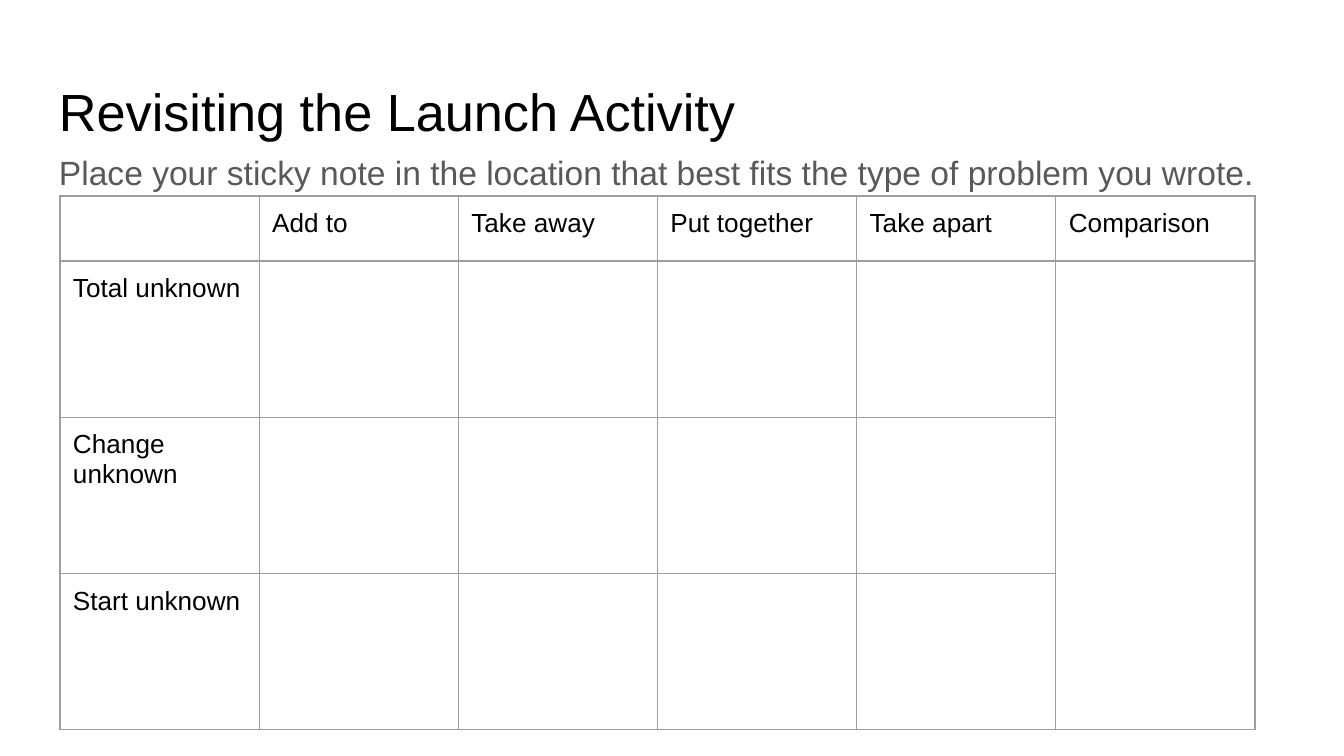
from lxml.etree import SubElement
from pptx import Presentation
from pptx.dml.color import RGBColor
from pptx.enum.text import MSO_ANCHOR as Anchor
from pptx.oxml.ns import qn
from pptx.util import Pt

BLACK = RGBColor(0x00, 0x00, 0x00)
GRAY = RGBColor(0x59, 0x59, 0x59)
WHITE = RGBColor(0xFF, 0xFF, 0xFF)
BORDER = RGBColor(0x9E, 0x9E, 0x9E)
FONT = "Arial"

TITLE = "Revisiting the Launch Activity"
PROMPT = "Place your sticky note in the location that best fits the type of problem you wrote."
PROBLEM_TYPES = ["Add to", "Take away", "Put together", "Take apart", "Comparison"]
UNKNOWNS = ["Total unknown", "Change unknown", "Start unknown"]

SLIDE_WIDTH, SLIDE_HEIGHT = 1344, 756
TEXT_LEFT, TEXT_WIDTH = 46, 1253
TABLE_LEFT, TABLE_TOP, TABLE_WIDTH, TABLE_HEIGHT = 60, 196, 1195, 534
HEADER_HEIGHT = 65
INSET = 13
CELL_SIZE = 14


def px(length):
    return round(length * 914400 / 134.4)


def add_span(para, text, size, color):
    span = para.add_run()
    span.text = text
    span.font.name = FONT
    span.font.size = Pt(size)
    span.font.color.rgb = color


def set_insets(target):
    target.margin_left = target.margin_right = px(INSET)
    target.margin_top = target.margin_bottom = px(INSET)


def add_text(page, top, height, text, size, color):
    box = page.shapes.add_textbox(px(TEXT_LEFT), px(top), px(TEXT_WIDTH), px(height))
    frame = box.text_frame
    frame.word_wrap = True
    frame.vertical_anchor = Anchor.TOP
    set_insets(frame)
    para = frame.paragraphs[0]
    add_span(para, text, size, color)
    return para


def style_cell(cell):
    set_insets(cell)
    cell.vertical_anchor = Anchor.TOP
    properties = cell._tc.get_or_add_tcPr()
    for side in ("a:lnL", "a:lnR", "a:lnT", "a:lnB"):
        line = SubElement(properties, qn(side), w=str(Pt(0.75)))
        fill = SubElement(line, qn("a:solidFill"))
        SubElement(fill, qn("a:srgbClr"), val=str(BORDER))
    cell.fill.background()


def fill_cell(cell, text):
    para = cell.text_frame.paragraphs[0]
    if text:
        add_span(para, text, CELL_SIZE, BLACK)
    else:
        SubElement(para._p, qn("a:endParaRPr"), sz=str(CELL_SIZE * 100))


def add_problem_table(page):
    rows = [["", *PROBLEM_TYPES]]
    rows += [[unknown] + [""] * len(PROBLEM_TYPES) for unknown in UNKNOWNS]
    table = page.shapes.add_table(
        len(rows), len(rows[0]),
        px(TABLE_LEFT), px(TABLE_TOP), px(TABLE_WIDTH), px(TABLE_HEIGHT),
    ).table
    table.first_row = table.horz_banding = False
    for column in table.columns:
        column.width = px(TABLE_WIDTH / len(rows[0]))
    body_height = (TABLE_HEIGHT - HEADER_HEIGHT) / len(UNKNOWNS)
    for index, row in enumerate(table.rows):
        row.height = px(body_height if index else HEADER_HEIGHT)
    for row_index, row in enumerate(rows):
        for column_index, text in enumerate(row):
            cell = table.cell(row_index, column_index)
            style_cell(cell)
            fill_cell(cell, text)
    last = len(PROBLEM_TYPES)
    table.cell(1, last).merge(table.cell(len(UNKNOWNS), last))


def main():
    deck = Presentation()
    deck.slide_width, deck.slide_height = px(SLIDE_WIDTH), px(SLIDE_HEIGHT)
    page = deck.slides.add_slide(deck.slide_layouts[6])
    page.background.fill.solid()
    page.background.fill.fore_color.rgb = WHITE
    add_text(page, 66, 85, TITLE, 28, BLACK)
    prompt = add_text(page, 133, 75, PROMPT, 18, GRAY)
    prompt.line_spacing = 1.15
    prompt.space_after = Pt(16)
    add_problem_table(page)
    deck.save("out.pptx")


if __name__ == "__main__":
    main()
